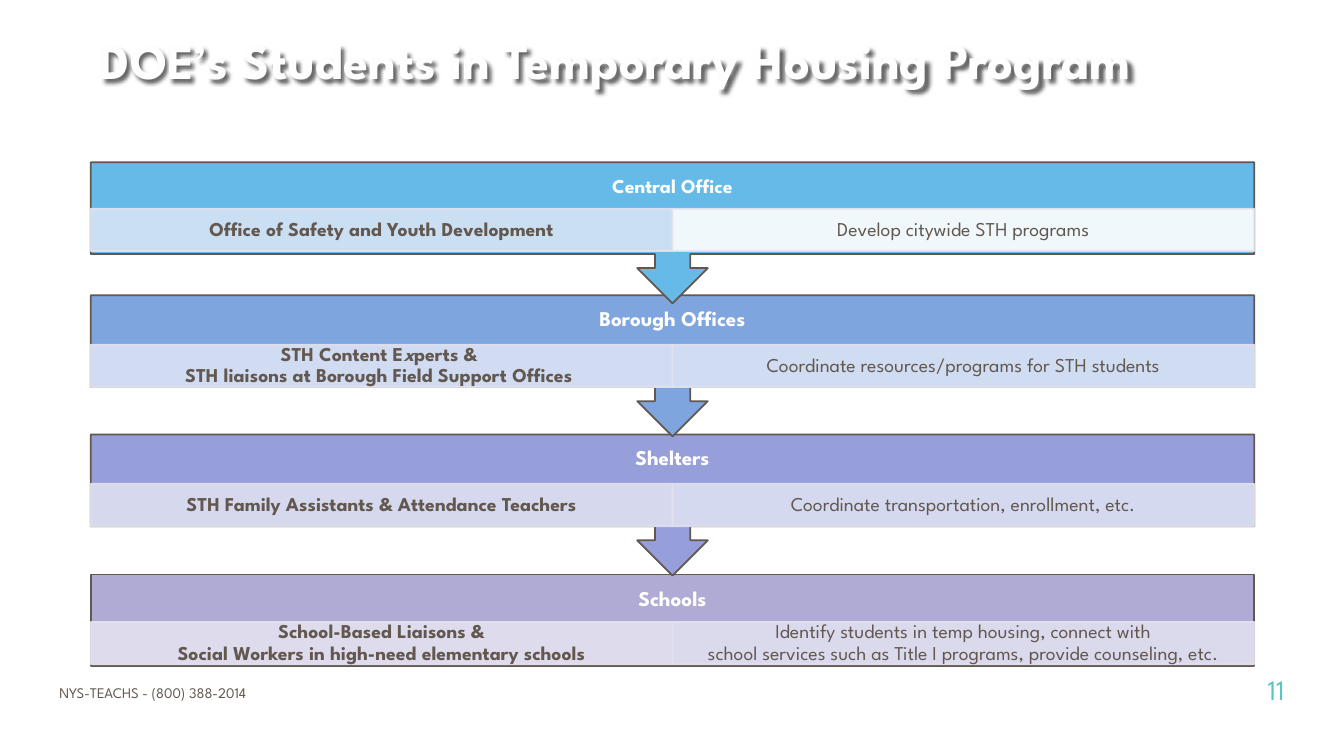
from copy import deepcopy

from lxml import etree
from pptx import Presentation
from pptx.dml.color import RGBColor
from pptx.enum.shapes import MSO_SHAPE
from pptx.enum.text import MSO_ANCHOR, PP_ALIGN
from pptx.oxml.ns import qn
from pptx.util import Emu, Pt

RECTANGLE = MSO_SHAPE.RECTANGLE
CALLOUT = MSO_SHAPE.UP_ARROW_CALLOUT
LEFT, CENTER, RIGHT = PP_ALIGN.LEFT, PP_ALIGN.CENTER, PP_ALIGN.RIGHT
MIDDLE, BOTTOM = MSO_ANCHOR.MIDDLE, MSO_ANCHOR.BOTTOM

PX = 9144  # 100 px to the inch
FONT = "League Spartan"
WHITE = RGBColor(0xFF, 0xFF, 0xFF)
TITLE_WHITE = RGBColor(0xFE, 0xFE, 0xFE)
BLACK = RGBColor(0x00, 0x00, 0x00)
BROWN = RGBColor(0x62, 0x58, 0x50)
TEAL = RGBColor(0x5B, 0xC4, 0xBE)
CELL_LINE = RGBColor(0xE4, 0xE2, 0xEF)
CELL_OPACITY = 90

BAND_LEFT, BAND_WIDTH = 90, 1154
CELL_WIDTH = BAND_WIDTH // 2
HEADING_HEIGHT, CELL_HEIGHT = 49, 42
CALLOUT_HEIGHT, LAST_HEIGHT = 140, 91

# top, heading, heading size, cell offset, band fill, (text, cell fill) for both cells
# Text between asterisks is italic.
LEVELS = [
    (161, "Central Office", 14, 46, RGBColor(0x66, 0xBA, 0xE8),
     ("Office of Safety and Youth Development", RGBColor(0xD6, 0xE4, 0xF5)),
     ("Develop citywide STH programs", WHITE)),
    (293, "Borough Offices", 15, 49, RGBColor(0x7F, 0xA5, 0xDF),
     ("STH Content E*x*perts & \nSTH liaisons at Borough Field Support Offices ",
      RGBColor(0xDA, 0xE1, 0xF3)),
     ("Coordinate resources/programs for STH students", RGBColor(0xD8, 0xE2, 0xF4))),
    (431, "Shelters", 15, 49, RGBColor(0x96, 0x9F, 0xD9),
     ("STH Family Assistants & Attendance Teachers", RGBColor(0xDE, 0xE0, 0xF1)),
     ("Coordinate transportation, enrollment, etc.", RGBColor(0xDC, 0xE0, 0xF2))),
    (570, "Schools", 15, 47, RGBColor(0xB0, 0xAB, 0xD5),
     ("School-Based Liaisons &\nSocial Workers in high-need elementary schools",
      RGBColor(0xE4, 0xE2, 0xEF)),
     ("Identify students in temp housing, connect with\n"
      "school services such as Title I programs, provide counseling, etc.",
      RGBColor(0xE0, 0xE0, 0xF0))),
]


def px(*lengths):
    return [Emu(length * PX) for length in lengths]


def write(shape, text, size, color, bold=False, align=CENTER, anchor=MIDDLE,
          margins=(10, 5, 10, 5)):
    """Fill a shape with one paragraph; newlines become line breaks."""
    frame = shape.text_frame
    frame.word_wrap = True
    frame.vertical_anchor = anchor
    (frame.margin_left, frame.margin_top,
     frame.margin_right, frame.margin_bottom) = px(*margins)
    paragraph = frame.paragraphs[0]
    paragraph.alignment = align
    for part_index, part in enumerate(text.split("*")):
        for line_index, line in enumerate(part.split("\n")):
            if line_index:
                paragraph.add_line_break()
            run = paragraph.add_run()
            run.text = line
            font = run.font
            font.name, font.size, font.bold = FONT, Pt(size), bold
            font.italic = part_index % 2 == 1
            font.color.rgb = color
    for line_break in paragraph._p.findall(qn("a:br")):
        line_break.append(deepcopy(run._r.rPr))
    return paragraph


def add_text(slide, box, text, size, color, **options):
    return write(slide.shapes.add_textbox(*px(*box)), text, size, color, **options)


def add_panel(slide, kind, box, fill, line):
    shape = slide.shapes.add_shape(kind, *px(*box))
    shape.shadow.inherit = False
    shape.fill.solid()
    shape.fill.fore_color.rgb = fill
    shape.line.color.rgb = line
    shape.line.width = Pt(1.25)
    return shape


def set_opacity(shape, percent):
    """Apply one opacity to every colour of the shape itself."""
    for color in shape._element.spPr.iter(qn("a:srgbClr")):
        etree.SubElement(color, qn("a:alpha"), val=str(percent * 1000))


def add_text_shadow(shape):
    """Cast a shadow from an unfilled shape, so that its text throws it."""
    shape.fill.background()
    effects = etree.SubElement(shape._element.spPr, qn("a:effectLst"))
    shadow = etree.SubElement(effects, qn("a:outerShdw"), blurRad="38100",
                              dist="38100", dir="2700000", algn="tl", rotWithShape="0")
    etree.SubElement(shadow, qn("a:srgbClr"), val=str(BLACK))
    set_opacity(shape, 60)


def add_title(slide, text):
    title = slide.shapes.title
    title.left, title.top, title.width, title.height = px(89, 6, 1156, 106)
    write(title, text, 36, TITLE_WHITE, bold=True, align=LEFT)
    add_text_shadow(title)


def add_level(slide, level, is_last):
    top, heading, heading_size, cell_offset, fill, *cells = level
    kind, height = (RECTANGLE, LAST_HEIGHT) if is_last else (CALLOUT, CALLOUT_HEIGHT)
    band = add_panel(slide, kind, (BAND_LEFT, top, BAND_WIDTH, height), fill, BROWN)
    band.rotation = 0 if is_last else 180
    paragraph = add_text(slide, (BAND_LEFT, top, BAND_WIDTH, HEADING_HEIGHT), heading,
                         heading_size, WHITE, bold=True, margins=(12, 12, 12, 12))
    paragraph.line_spacing = 0.9
    for column, (text, cell_fill) in enumerate(cells):
        box = (BAND_LEFT + column * CELL_WIDTH, top + cell_offset, CELL_WIDTH, CELL_HEIGHT)
        cell = add_panel(slide, RECTANGLE, box, cell_fill, CELL_LINE)
        set_opacity(cell, CELL_OPACITY)
        paragraph = write(cell, text, 14, BROWN, bold=column == 0, margins=(11, 2, 11, 2))
        paragraph.line_spacing = 0.9


def main():
    presentation = Presentation()
    presentation.slide_width, presentation.slide_height = px(1333, 750)
    slide = presentation.slides.add_slide(presentation.slide_layouts[5])
    add_title(slide, "DOE’s Students in Temporary Housing Program")
    for level in reversed(LEVELS):
        add_level(slide, level, is_last=level is LEVELS[-1])
    add_text(slide, (49, 661, 945, 40), "NYS-TEACHS - (800) 388-2014", 10.5, BROWN,
             align=LEFT, anchor=BOTTOM)
    add_text(slide, (1168, 647, 116, 54), "11", 20, TEAL, align=RIGHT, anchor=BOTTOM,
             margins=(10, 5, 10, 1))
    presentation.save("out.pptx")


if __name__ == "__main__":
    main()
